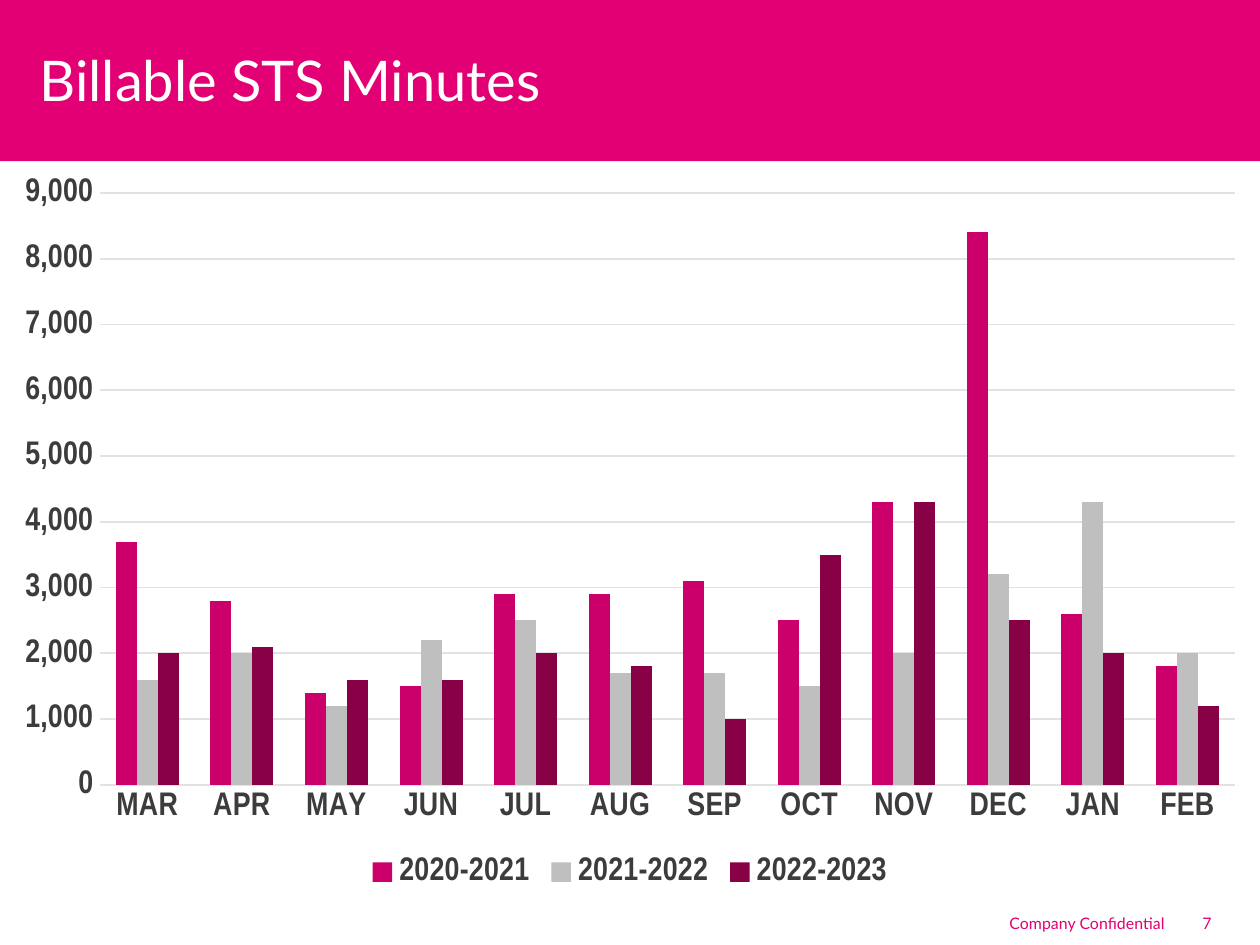
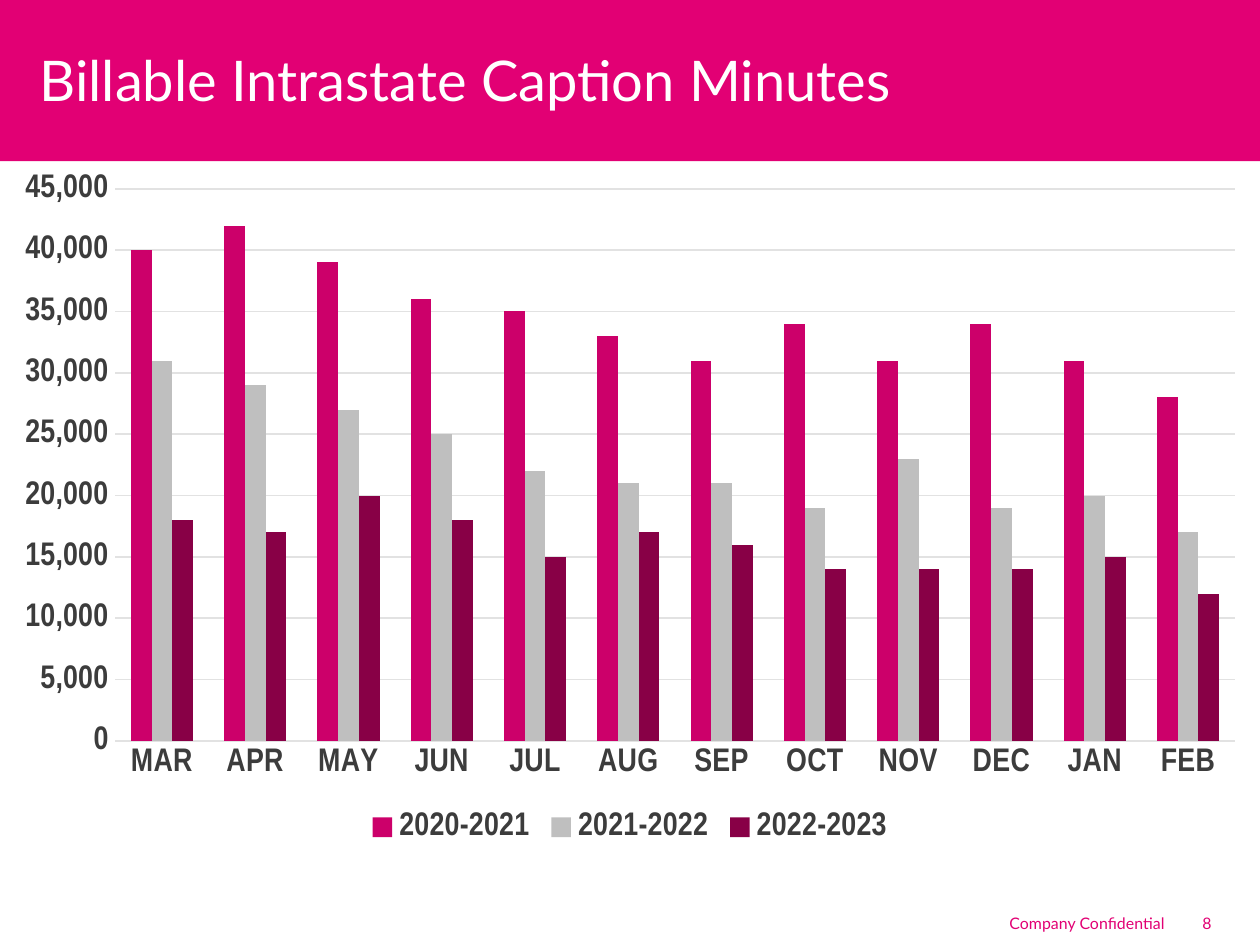
import pptx
import pptx.chart.data
import pptx.dml.color
import pptx.enum.chart
import pptx.enum.shapes
import pptx.enum.text
import pptx.util

Cm, Pt = pptx.util.Cm, pptx.util.Pt
ALIGN = pptx.enum.text.PP_ALIGN

# Content
MONTHS = ["MAR", "APR", "MAY", "JUN", "JUL", "AUG",
          "SEP", "OCT", "NOV", "DEC", "JAN", "FEB"]
FOOTER = "Company Confidential"
SLIDES = [
    {
        "number": 7, "title": "Billable STS Minutes",
        "top": 2.46, "height": 11.07, "step": 1000, "max": 9000,
        "minutes": {
            "2020-2021": [3700, 2800, 1400, 1500, 2900, 2900,
                          3100, 2500, 4300, 8400, 2600, 1800],
            "2021-2022": [1600, 2000, 1200, 2200, 2500, 1700,
                          1700, 1500, 2000, 3200, 4300, 2000],
            "2022-2023": [2000, 2100, 1600, 1600, 2000, 1800,
                          1000, 3500, 4300, 2500, 2000, 1200],
        },
    },
    {
        "number": 8, "title": "Billable Intrastate Caption Minutes",
        "top": 2.41, "height": 10.44, "step": 5000, "max": 45000,
        "minutes": {
            "2020-2021": [40000, 42000, 39000, 36000, 35000, 33000,
                          31000, 34000, 31000, 34000, 31000, 28000],
            "2021-2022": [31000, 29000, 27000, 25000, 22000, 21000,
                          21000, 19000, 23000, 19000, 20000, 17000],
            "2022-2023": [18000, 17000, 20000, 18000, 15000, 17000,
                          16000, 14000, 14000, 14000, 15000, 12000],
        },
    },
]

# Shared style
WIDTH, HEIGHT, BAND_HEIGHT = 19.05, 14.29, 2.44
MAGENTA, WHITE, INK, GRID = "E20074", "FFFFFF", "3C3C3C", "E2E2E2"
SERIES_COLORS = ["CC006A", "BFBFBF", "880046"]
TEXT_FONT, CHART_FONT = "Lato", "Arial Narrow"


def rgb(value):
    return pptx.dml.color.RGBColor.from_string(value)


def set_font(font, name, size, color, bold=False):
    font.name, font.size, font.bold = name, Pt(size), bold
    font.color.rgb = rgb(color)


def add_text(slide, text, box, size, color, inset, align=ALIGN.LEFT):
    tf = slide.shapes.add_textbox(*map(Cm, box)).text_frame
    tf.word_wrap = True
    tf.vertical_anchor = pptx.enum.text.MSO_ANCHOR.MIDDLE
    tf.margin_left = tf.margin_right = Cm(inset)
    tf.margin_top = tf.margin_bottom = Cm(inset / 2)
    p = tf.paragraphs[0]
    p.text, p.alignment = text, align
    set_font(p.font, TEXT_FONT, size, color)


def add_frame(slide, title, number):
    # Title band
    band = slide.shapes.add_shape(pptx.enum.shapes.MSO_SHAPE.RECTANGLE,
                                  0, 0, Cm(WIDTH), Cm(BAND_HEIGHT))
    band.shadow.inherit = False
    band.fill.solid()
    band.fill.fore_color.rgb = rgb(MAGENTA)
    band.line.fill.background()
    add_text(slide, title, (0.4, 0.44, 18.29, 1.52), 24, WHITE, 0.2)

    # Footer and page number
    add_text(slide, FOOTER, (11.71, 13.74, 6.05, 0.43), 6.8, MAGENTA, 0.15,
             ALIGN.RIGHT)
    add_text(slide, str(number), (18.03, 13.74, 0.97, 0.43), 6.8, MAGENTA, 0.15)


def add_minutes_chart(slide, item):
    data = pptx.chart.data.CategoryChartData(number_format="#,##0")
    data.categories = MONTHS
    for year, values in item["minutes"].items():
        data.add_series(year, values)
    chart = slide.shapes.add_chart(
        pptx.enum.chart.XL_CHART_TYPE.COLUMN_CLUSTERED,
        0, Cm(item["top"]), Cm(WIDTH), Cm(item["height"]), data).chart
    chart.has_title = False
    set_font(chart.font, TEXT_FONT, 10, INK)

    # Columns
    plot = chart.plots[0]
    plot.gap_width, plot.overlap = 150, 0
    plot.vary_by_categories = False
    for series, color in zip(plot.series, SERIES_COLORS):
        series.format.fill.solid()
        series.format.fill.fore_color.rgb = rgb(color)

    # Axes
    for axis in (chart.category_axis, chart.value_axis):
        axis.major_tick_mark = pptx.enum.chart.XL_TICK_MARK.NONE
        axis.minor_tick_mark = pptx.enum.chart.XL_TICK_MARK.NONE
        axis.format.line.fill.background()
        set_font(axis.tick_labels.font, CHART_FONT, 14, INK, True)
    axis = chart.value_axis
    axis.minimum_scale, axis.maximum_scale = 0, item["max"]
    axis.major_unit = item["step"]
    axis.tick_labels.number_format = "#,##0"
    axis.tick_labels.number_format_is_linked = False
    axis.has_major_gridlines = True
    line = axis.major_gridlines.format.line
    line.color.rgb, line.width = rgb(GRID), Pt(0.75)

    # Legend
    chart.has_legend = True
    chart.legend.position = pptx.enum.chart.XL_LEGEND_POSITION.BOTTOM
    chart.legend.include_in_layout = False
    set_font(chart.legend.font, CHART_FONT, 14, INK, True)


def main():
    prs = pptx.Presentation()
    prs.slide_width, prs.slide_height = Cm(WIDTH), Cm(HEIGHT)
    for item in SLIDES:
        s = prs.slides.add_slide(prs.slide_layouts[6])
        add_frame(s, item["title"], item["number"])
        add_minutes_chart(s, item)
    prs.save("out.pptx")


if __name__ == "__main__":
    main()
